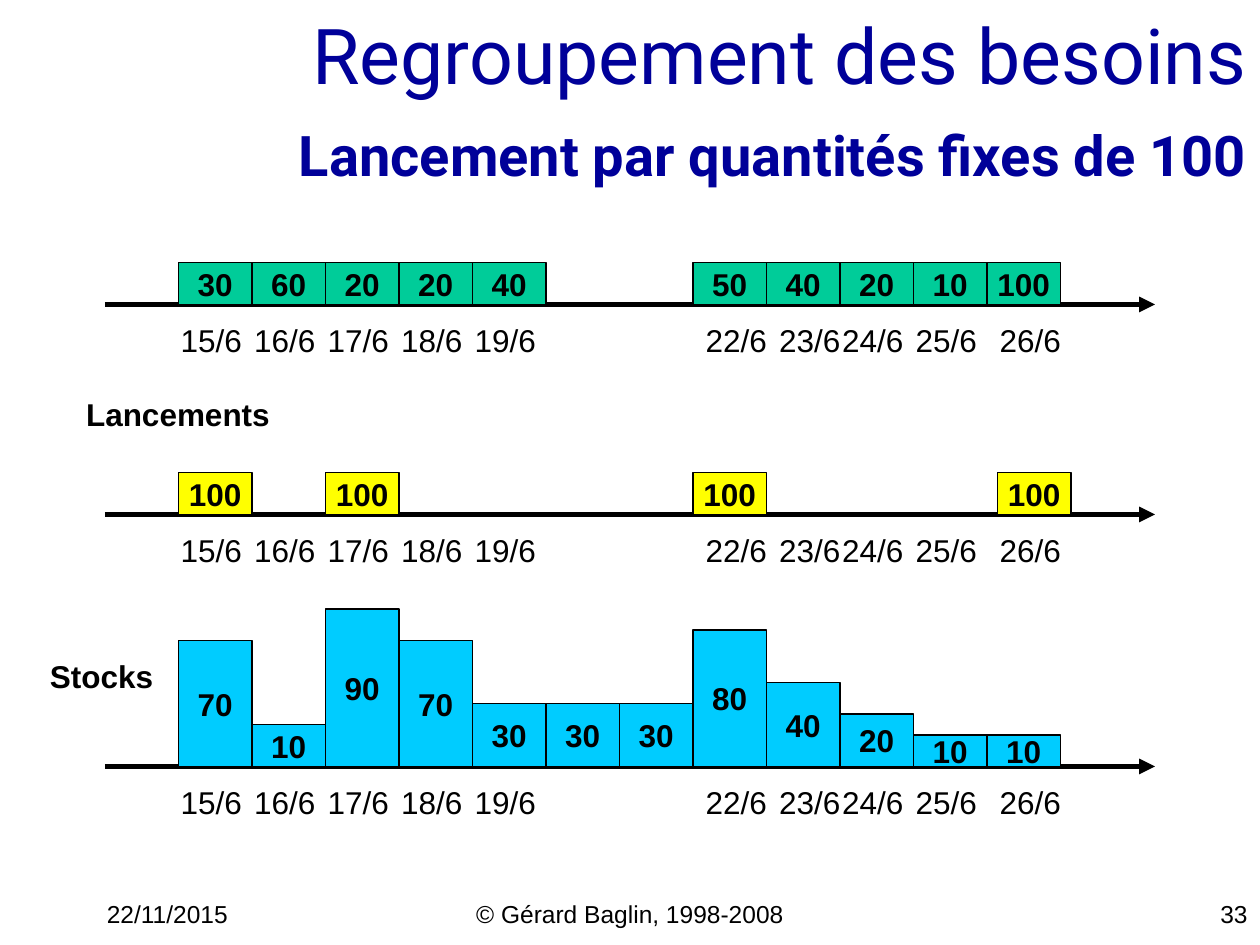
from pptx import Presentation
from pptx.dml.color import RGBColor
from pptx.enum.shapes import MSO_CONNECTOR, MSO_SHAPE
from pptx.enum.text import MSO_ANCHOR, PP_ALIGN
from pptx.oxml.ns import qn
from pptx.util import Pt
from lxml import etree

LEFT, MID, RIGHT = PP_ALIGN.LEFT, PP_ALIGN.CENTER, PP_ALIGN.RIGHT
TOP, CENTER = MSO_ANCHOR.TOP, MSO_ANCHOR.MIDDLE
RECT, LINE = MSO_SHAPE.RECTANGLE, MSO_CONNECTOR.STRAIGHT

BLACK = RGBColor(0x00, 0x00, 0x00)
NAVY = RGBColor(0x00, 0x00, 0x99)
GREEN = RGBColor(0x00, 0xCC, 0x99)
YELLOW = RGBColor(0xFF, 0xFF, 0x00)
BLUE = RGBColor(0x00, 0xCC, 0xFF)

# Day grid: one slot per calendar day, from 15/6 to 26/6
START, STEP, BAR = 102, 42, 24

# Slot: (date, shift of its label from the slot)
DATES = {0: ("15/6", -6), 1: ("16/6", -6), 2: ("17/6", -6),
         3: ("18/6", -6), 4: ("19/6", -6), 7: ("22/6", 0),
         8: ("23/6", 0), 9: ("24/6", -6), 10: ("25/6", -6),
         11: ("26/6", 0)}
NEEDS = {0: 30, 1: 60, 2: 20, 3: 20, 4: 40,
         7: 50, 8: 40, 9: 20, 10: 10, 11: 100}
# The last launch sits slightly right of its slot
ORDERS = [(0, 0), (2, 0), (7, 0), (11, 6)]
# Stock level and bar height for each slot
STOCKS = [(70, 72), (10, 24), (90, 90), (70, 72), (30, 36), (30, 36),
          (30, 36), (80, 78), (40, 48), (20, 30), (10, 18), (10, 18)]


def write(frame, text, size=18, font="Arial", color=BLACK, bold=False,
          align=MID, anchor=CENTER, wrap=False):
    """Append text to the first paragraph; a newline is a line break."""
    frame.word_wrap = wrap
    frame.vertical_anchor = anchor
    para = frame.paragraphs[0]
    para.alignment = align
    for row, part in enumerate(text.split("\n")):
        if row:
            para.add_line_break()
        run = para.add_run()
        run.text = part
        run.font.size = Pt(size)
        run.font.name = font
        run.font.bold = bold
        run.font.color.rgb = color


def label(slide, x, y, w, h, text, **style):
    box = slide.shapes.add_textbox(Pt(x), Pt(y), Pt(w), Pt(h))
    write(box.text_frame, text, **style)
    return box


def bar(slide, slot, base, high, value, fill, shift=0):
    """Draw a bar that stands on the axis at height base."""
    x = START + slot * STEP + shift
    shape = slide.shapes.add_shape(RECT, Pt(x), Pt(base - high),
                                   Pt(STEP), Pt(high))
    shape.shadow.inherit = False
    shape.fill.solid()
    shape.fill.fore_color.rgb = fill
    shape.line.color.rgb = BLACK
    shape.line.width = Pt(0.75)
    write(shape.text_frame, str(value), bold=True)


def axis(slide, y):
    """Draw a time arrow with its dates."""
    line = slide.shapes.add_connector(LINE, Pt(60), Pt(y), Pt(660), Pt(y))
    line.line.color.rgb = BLACK
    line.line.width = Pt(3)
    etree.SubElement(line.line._get_or_add_ln(), qn("a:tailEnd"),
                     type="triangle")
    etree.SubElement(line._element.spPr, qn("a:effectLst"))
    for slot, (date, shift) in DATES.items():
        label(slide, START + slot * STEP + shift, y + 6, 49.5, 29, date)


def main():
    deck = Presentation()
    deck.slide_width, deck.slide_height = Pt(720), Pt(540)
    slide = deck.slides.add_slide(deck.slide_layouts[6])

    # Title
    head = {"font": "Roboto", "color": NAVY, "align": RIGHT, "wrap": True}
    title = label(slide, 0, 12, 720, 90, "Regroupement des besoins\n ",
                  size=44, **head)
    write(title.text_frame, "Lancement par quantités fixes de 100",
          size=32, bold=True, **head)

    # Needs
    axis(slide, 174)
    for slot, value in NEEDS.items():
        bar(slide, slot, 174, BAR, value, GREEN)

    # Launches
    label(slide, 42, 222, 119.5, 29, "Lancements", bold=True)
    axis(slide, 294)
    for slot, shift in ORDERS:
        bar(slide, slot, 294, BAR, 100, YELLOW, shift)

    # Stocks
    label(slide, 20, 372, 76, 29, "Stocks", bold=True)
    axis(slide, 438)
    for slot, (value, high) in enumerate(STOCKS):
        bar(slide, slot, 438, high, value, BLUE)

    # Footer
    for x, w, text, align in [(54, 150, "22/11/2015", LEFT),
                              (246, 228, "© Gérard Baglin, 1998-2008", MID),
                              (570, 150, "33", RIGHT)]:
        label(slide, x, 510, w, 18, text, size=14, align=align,
              anchor=TOP, wrap=True)

    deck.save("out.pptx")


if __name__ == "__main__":
    main()
